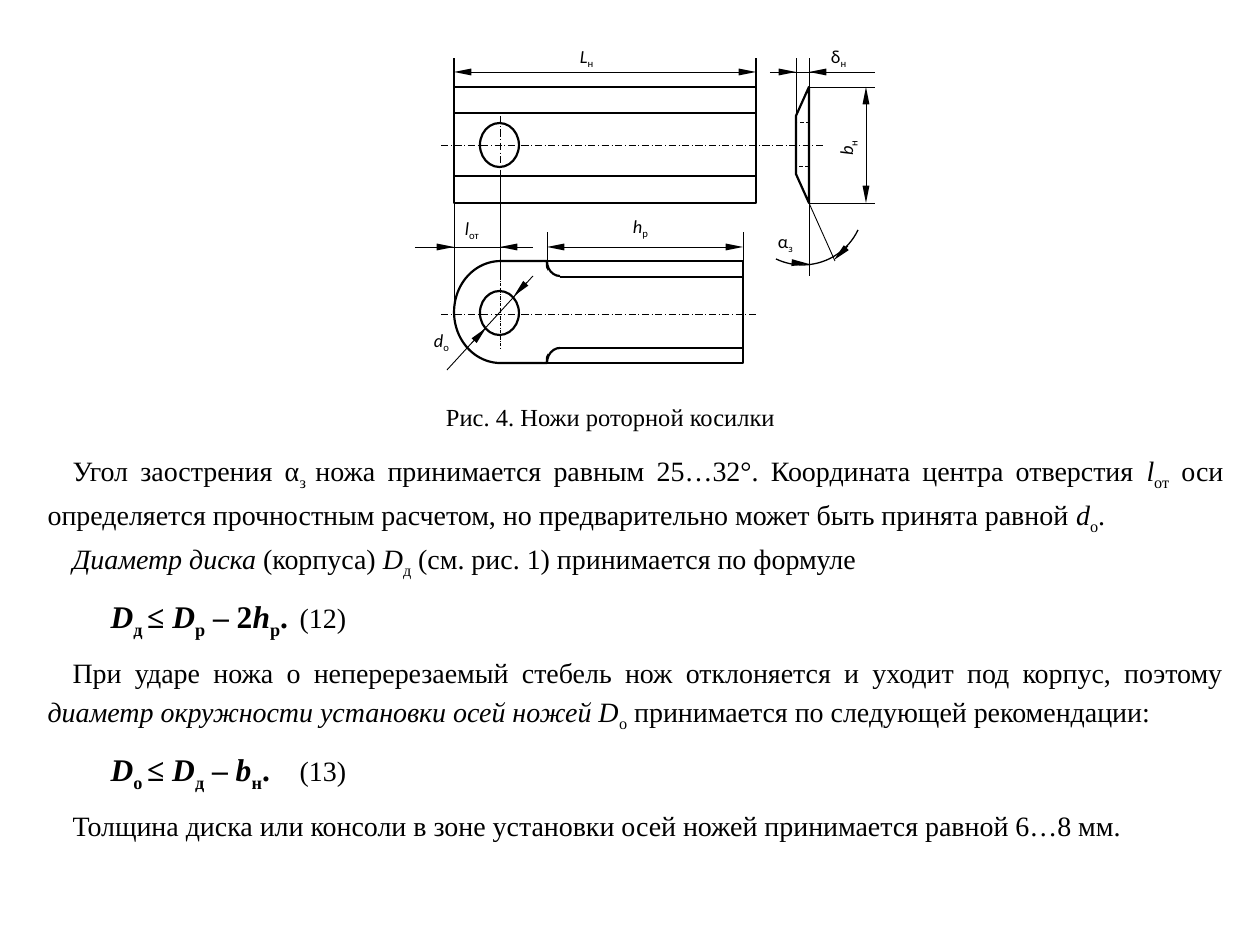
from dataclasses import dataclass

from lxml.etree import SubElement
from pptx import Presentation
from pptx.dml.color import RGBColor
from pptx.enum.dml import MSO_LINE as Dash
from pptx.enum.shapes import MSO_CONNECTOR, MSO_SHAPE as Preset
from pptx.enum.text import MSO_ANCHOR, MSO_AUTO_SIZE, PP_ALIGN as Align
from pptx.oxml.ns import qn
from pptx.util import Pt

PX = 914400 / 126


@dataclass(frozen=True)
class Theme:
    ink: RGBColor = RGBColor(0, 0, 0)
    paper: RGBColor = RGBColor(255, 255, 255)
    text_font: str = "Times New Roman"
    label_font: str = "Calibri"
    label: float = 10.5
    caption: float = 14
    body: float = 16
    formula: float = 18
    outline: float = 1.25
    medium: float = 0.75
    thin: float = 0.5
    hairline: float = 0.25


theme = Theme()


def px(*lengths):
    return [round(length * PX) for length in lengths]


def write(paragraph, text, size, font=theme.text_font, bold=False, align=Align.LEFT,
          indent=0, before=0, after=0, tabs=()):
    """Fill a paragraph: *...* is italic and ~...~ is subscript."""
    paragraph.alignment, paragraph.line_spacing = align, 1.15
    paragraph.space_before, paragraph.space_after = Pt(before), Pt(after)
    properties = paragraph._p.get_or_add_pPr()
    properties.set("marL", "0")
    properties.set("indent", str(px(indent)[0]))
    SubElement(properties, qn("a:buNone"))
    if tabs:
        tab_list = SubElement(properties, qn("a:tabLst"))
        for position in tabs:
            SubElement(tab_list, qn("a:tab"), pos=str(px(position)[0]), algn="r")
    for i, stretch in enumerate(text.split("*")):
        for j, part in enumerate(stretch.split("~")):
            if not part:
                continue
            run = paragraph.add_run()
            run.text = part
            run.font.name, run.font.size = font, Pt(size)
            run.font.bold, run.font.italic = bold, i % 2 == 1
            run.font.color.rgb = theme.ink
            if j % 2:
                run.font._element.set("baseline", "-25000")


presentation = Presentation()
presentation.slide_width, presentation.slide_height = px(1260, 945)
slide = presentation.slides.add_slide(presentation.slide_layouts[1])
drawing = slide.shapes.add_group_shape().shapes

# Solid parts: the blade from above, its side view and its end profile
parts = [drawing.add_shape(preset, *px(*box)) for preset, box in [
    (Preset.RECTANGLE, (454, 87, 302, 116)),
    (Preset.OVAL, (480, 123, 39, 44)),
    (Preset.FLOWCHART_DELAY, (454, 261, 93, 102)),
    (Preset.RECTANGLE, (547, 261, 196, 102)),
]]
parts[2].rotation = 180
for points in [
    [(809, 87), (796, 116), (796, 174), (809, 203)],
    [(543, 362), (559, 333), (559, 292), (543, 262)],
]:
    outline = drawing.build_freeform(*points[0], scale=PX)
    outline.add_line_segments(points[1:], close=True)
    parts.append(outline.convert_to_shape())
joint = parts[-1]
parts.append(drawing.add_shape(Preset.OVAL, *px(480, 291, 39, 44)))
for part in parts:
    part.shadow.inherit = False
    part.fill.solid()
    part.fill.fore_color.rgb = theme.paper
    part.line.color.rgb = theme.ink
    part.line.width = Pt(theme.outline)
joint.line.fill.background()

# Arcs: full ellipse box, start and end angle in degrees, line width
for box, start, end, width in [
    ((547, 246, 26, 30), 90, 180, theme.outline),
    ((547, 348, 26, 30), 180, 270, theme.outline),
    ((741, 142, 123, 123), 25.5, 115.5, theme.medium),
]:
    arc = drawing.add_shape(Preset.ARC, *px(*box))
    arc.adjustments[0], arc.adjustments[1] = start * 0.6, end * 0.6
    arc.shadow.inherit = False
    arc.fill.background()
    arc.line.color.rgb = theme.ink
    arc.line.width = Pt(width)

# Lines by style: width, dash, arrow ends, (x1, y1, x2, y2)
BOTH, END = ("a:headEnd", "a:tailEnd"), ("a:tailEnd",)
for width, dash, arrows, lines in [
    (theme.outline, None, (), [
        (454, 113, 756, 113), (454, 176, 756, 176),
        (560, 277, 743, 277), (560, 348, 743, 348)]),
    (theme.thin, Dash.LONG_DASH_DOT, (), [
        (441, 145, 823, 145), (500, 116, 500, 174), (441, 314, 756, 314)]),
    (theme.hairline, Dash.LONG_DASH_DOT, (), [(500, 276, 500, 349)]),
    (theme.thin, Dash.DASH, (), [(810, 122, 796, 122), (809, 166, 795, 166)]),
    (theme.medium, None, (), [(454, 87, 454, 58), (756, 87, 756, 58)]),
    (theme.thin, None, (), [
        (809, 203, 809, 276), (809, 203, 835, 261), (500, 174, 500, 276),
        (454, 203, 454, 305), (809, 87, 875, 87), (809, 203, 875, 203),
        (770, 72, 875, 72), (533, 276, 447, 370)]),
    (theme.hairline, None, (), [
        (809, 87, 809, 58), (796, 116, 796, 58), (415, 247, 533, 247),
        (547, 261, 547, 232), (743, 261, 743, 232)]),
    (theme.thin, None, BOTH, [
        (454, 72, 756, 72), (866, 87, 866, 203), (547, 247, 743, 247)]),
    (theme.thin, None, END, [(796, 263, 809, 264), (848, 246, 834, 260)]),
    (theme.hairline, None, END, [
        (782, 72, 796, 72), (835, 72, 809, 72), (428, 247, 454, 247),
        (514, 247, 500, 247), (527, 282, 514, 296), (472, 343, 486, 328)]),
]:
    for ends in lines:
        connector = drawing.add_connector(MSO_CONNECTOR.STRAIGHT, *px(*ends))
        connector.line.color.rgb = theme.ink
        connector.line.width = Pt(width)
        if dash:
            connector.line.dash_style = dash
        for arrow in arrows:
            SubElement(connector.line._ln, qn(arrow), type="triangle", w="sm", len="lg")
        SubElement(connector._element.spPr, qn("a:effectLst"))

# Dimension labels
for text, box in [
    ("*L*~н~", (572, 37, 55, 57)),
    ("*h*~р~", (625, 207, 53, 44)),
    ("*l*~от~", (457, 209, 53, 44)),
    ("*b*~н~", (823, 116, 53, 44)),
    ("δ~н~", (823, 37, 53, 44)),
    ("*d*~o~", (426, 321, 53, 48)),
    ("α~з~", (770, 222, 53, 44)),
]:
    frame = drawing.add_textbox(*px(*box)).text_frame
    frame.word_wrap = True
    frame.margin_left, frame.margin_top, frame.margin_right, frame.margin_bottom = px(8, 4, 8, 4)
    if "b" in text:
        frame._txBody.bodyPr.set("vert", "vert270")
    write(frame.paragraphs[0], text, theme.label, theme.label_font, after=10)

# Caption and body text
caption, body = slide.shapes.title, slide.placeholders[1]
for holder, box in [(caption, (432, 391, 357, 44)), (body, (35, 442, 1201, 377))]:
    holder.left, holder.top, holder.width, holder.height = px(*box)
    holder.text_frame.auto_size = MSO_AUTO_SIZE.NONE
    holder.text_frame.vertical_anchor = MSO_ANCHOR.TOP
    holder.text_frame.word_wrap = holder is body
write(caption.text_frame.paragraphs[0], "Рис. 4. Ножи роторной косилки",
      theme.caption, align=Align.CENTER)

for index, (text, number) in enumerate([
    ("Угол заострения α~з ~ножа принимается равным 25…32°. Координата центра отверстия "
     "*l*~от~ оси определяется прочностным расчетом, но предварительно может быть принята "
     "равной *d*~о~.", None),
    ("*Диаметр диска* (корпуса) *D*~д~ (см. рис. 1) принимается по формуле", None),
    ("*D*~д ~≤ *D*~р~ – 2*h*~р~.", "(12)"),
    ("При ударе ножа о неперерезаемый стебель нож отклоняется и уходит под корпус, поэтому "
     "*диаметр окружности установки осей ножей D*~о~ принимается по следующей рекомендации:",
     None),
    ("*D*~о ~≤ *D*~д~ – *b*~н~.", "(13)"),
    ("Толщина диска или консоли в зоне установки осей ножей принимается равной 6…8 мм.", None),
]):
    frame = body.text_frame
    paragraph = frame.add_paragraph() if index else frame.paragraphs[0]
    if number:
        write(paragraph, "\t" + text, theme.formula, bold=True, before=6, after=6,
              tabs=(730, 1174))
        number_run = paragraph.add_run()
        number_run.text = "\t" + number
        number_run.font.name, number_run.font.size = theme.text_font, Pt(theme.body)
        number_run.font.color.rgb = theme.ink
    else:
        write(paragraph, text, theme.body, align=Align.JUSTIFY, indent=25)

presentation.save("out.pptx")
